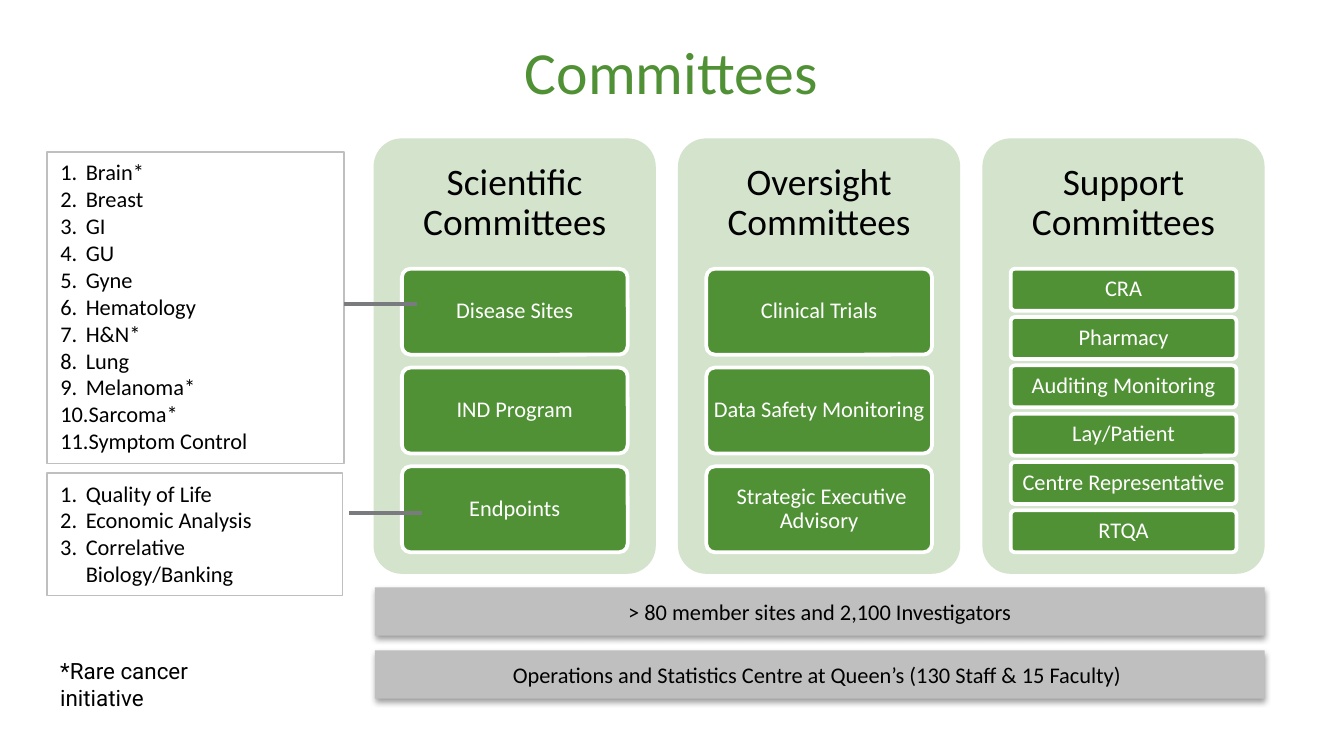
from dataclasses import dataclass

from lxml.etree import SubElement
from pptx import Presentation
from pptx.dml.color import RGBColor
from pptx.enum.shapes import MSO_CONNECTOR, MSO_SHAPE
from pptx.enum.text import MSO_ANCHOR, PP_ALIGN
from pptx.oxml.ns import qn
from pptx.util import Inches, Pt


@dataclass(frozen=True)
class Theme:
    green: str = "519136"
    white: str = "FFFFFF"
    black: str = "000000"
    gray: str = "BFBFBF"
    connector: str = "797B7E"
    font: str = "Calibri"
    note_font: str = "Roboto"
    title_size: int = 32
    heading_size: int = 20
    body_size: int = 12


THEME = Theme()

COLUMNS = [
    ("Scientific Committees", ["Disease Sites", "IND Program", "Endpoints"]),
    ("Oversight Committees",
     ["Clinical Trials", "Data Safety Monitoring", " Strategic Executive Advisory"]),
    ("Support Committees",
     ["CRA", "Pharmacy", "Auditing Monitoring", "Lay/Patient",
      "Centre Representative", "RTQA"]),
]
DISEASE_SITES = ["Brain*", "Breast", "GI", "GU", "Gyne", "Hematology", "H&N*",
                 "Lung", "Melanoma*", "Sarcoma*", "Symptom Control"]
ENDPOINTS = ["Quality of Life", "Economic Analysis", "Correlative Biology/Banking"]
BARS = ["> 80 member sites and 2,100 Investigators",
        "Operations and Statistics Centre at Queen’s (130 Staff & 15 Faculty) "]


def set_attributes(target, values):
    for name, value in values.items():
        setattr(target, name, value)


def add_number(paragraph):
    """Give a paragraph a hanging automatic number."""
    properties = paragraph._p.get_or_add_pPr()
    properties.set("marL", str(Inches(0.19)))
    properties.set("indent", str(-Inches(0.19)))
    SubElement(properties, qn("a:buAutoNum"), type="arabicPeriod")


def write_text(shape, lines, size=THEME.body_size, color=THEME.black,
               font=THEME.font, inset=None, anchor=MSO_ANCHOR.MIDDLE,
               numbered=False, **paragraph_format):
    frame = shape.text_frame
    frame_format = {"word_wrap": True, "vertical_anchor": anchor}
    if inset is not None:
        sides = ("left", "top", "right", "bottom")
        frame_format.update({f"margin_{side}": Inches(inset) for side in sides})
    set_attributes(frame, frame_format)
    for index, line in enumerate(lines):
        paragraph = frame.paragraphs[0] if index == 0 else frame.add_paragraph()
        if numbered:
            add_number(paragraph)
        set_attributes(paragraph, {"alignment": PP_ALIGN.CENTER, **paragraph_format})
        run = paragraph.add_run()
        run.text = line
        set_attributes(run.font, {"name": font, "size": Pt(size)})
        run.font.color.rgb = RGBColor.from_string(color)


def add_text(slide, box, text, **text_format):
    shape = slide.shapes.add_textbox(*map(Inches, box))
    write_text(shape, [text], **text_format)


def add_box(slide, kind, box, fill=None, line=None, line_width=0.75):
    shape = slide.shapes.add_shape(kind, *map(Inches, box))
    shape.shadow.inherit = False
    if fill:
        shape.fill.solid()
        shape.fill.fore_color.rgb = RGBColor.from_string(fill)
    else:
        shape.fill.background()
    if line:
        shape.line.color.rgb = RGBColor.from_string(line)
        shape.line.width = Pt(line_width)
    else:
        shape.line.fill.background()
    if kind == MSO_SHAPE.ROUNDED_RECTANGLE:
        shape.adjustments[0] = 0.1
    return shape


def add_column(slide, left, heading, items):
    # Tinted panel with its heading
    top, width, body_top, body_height = 1.03, 2.1, 2.0, 2.11
    panel = add_box(slide, MSO_SHAPE.ROUNDED_RECTANGLE,
                    (left, top, width, 3.24), THEME.green)
    color = panel._element.spPr.find(qn("a:solidFill"))[0]
    SubElement(color, qn("a:alpha"), val="25000")
    add_text(slide, (left, top, width, body_top - top), heading,
             size=THEME.heading_size, inset=0.08, line_spacing=0.9)

    # Items fill the body, with gaps in proportion to their height
    gap_ratio = 0.15
    height = body_height / (len(items) + gap_ratio * (len(items) - 1))
    for index, item in enumerate(items):
        item_top = body_top + index * height * (1 + gap_ratio)
        shape = add_box(slide, MSO_SHAPE.ROUNDED_RECTANGLE,
                        (left + 0.21, item_top, 1.68, height),
                        THEME.green, THEME.white, 2)
        write_text(shape, [item], color=THEME.white, inset=0.03, line_spacing=0.9)


def add_numbered_list(slide, box, items):
    shape = add_box(slide, MSO_SHAPE.RECTANGLE, box, line=THEME.gray)
    write_text(shape, items, anchor=MSO_ANCHOR.TOP, numbered=True,
               alignment=PP_ALIGN.LEFT)


def add_bar(slide, top, text):
    shape = add_box(slide, MSO_SHAPE.RECTANGLE, (2.79, top, 6.62, 0.36), THEME.gray)
    effects = shape._element.spPr.find(qn("a:effectLst"))
    shadow = SubElement(effects, qn("a:outerShdw"), blurRad=str(Pt(3.1)),
                        dist=str(Pt(1.6)), dir="5400000", rotWithShape="0")
    color = SubElement(shadow, qn("a:srgbClr"), val=THEME.black)
    SubElement(color, qn("a:alpha"), val="38000")
    write_text(shape, [text])


def add_link(slide, left, top):
    connector = slide.shapes.add_connector(
        MSO_CONNECTOR.STRAIGHT, *map(Inches, (left, top, left + 0.54, top)))
    connector.line.color.rgb = RGBColor.from_string(THEME.connector)
    connector.line.width = Pt(2)
    SubElement(connector._element.spPr, qn("a:effectLst"))


def main():
    # Widescreen slide, 16 to 9
    presentation = Presentation()
    set_attributes(presentation, {"slide_width": Inches(10),
                                  "slide_height": Inches(10 * 9 / 16)})
    slide = presentation.slides.add_slide(presentation.slide_layouts[6])

    # Title
    add_text(slide, (0.35, 0.3, 9.29, 0.45), "Committees",
             size=THEME.title_size, color=THEME.green)

    # Committee columns
    for index, (heading, items) in enumerate(COLUMNS):
        add_column(slide, 2.78 + index * 2.265, heading, items)

    # Detail lists and their links
    add_numbered_list(slide, (0.35, 1.13, 2.21, 2.32), DISEASE_SITES)
    add_numbered_list(slide, (0.35, 3.52, 2.2, 0.91), ENDPOINTS)
    add_link(slide, 2.56, 2.26)
    add_link(slide, 2.6, 3.82)

    # Foundation bars
    for index, text in enumerate(BARS):
        add_bar(slide, 4.37 + index * 0.47, text)

    # Footnote
    add_text(slide, (0.35, 4.84, 1.8, 0.3), "*Rare cancer initiative",
             font=THEME.note_font, anchor=MSO_ANCHOR.TOP, alignment=PP_ALIGN.LEFT)

    presentation.save("out.pptx")


if __name__ == "__main__":
    main()
